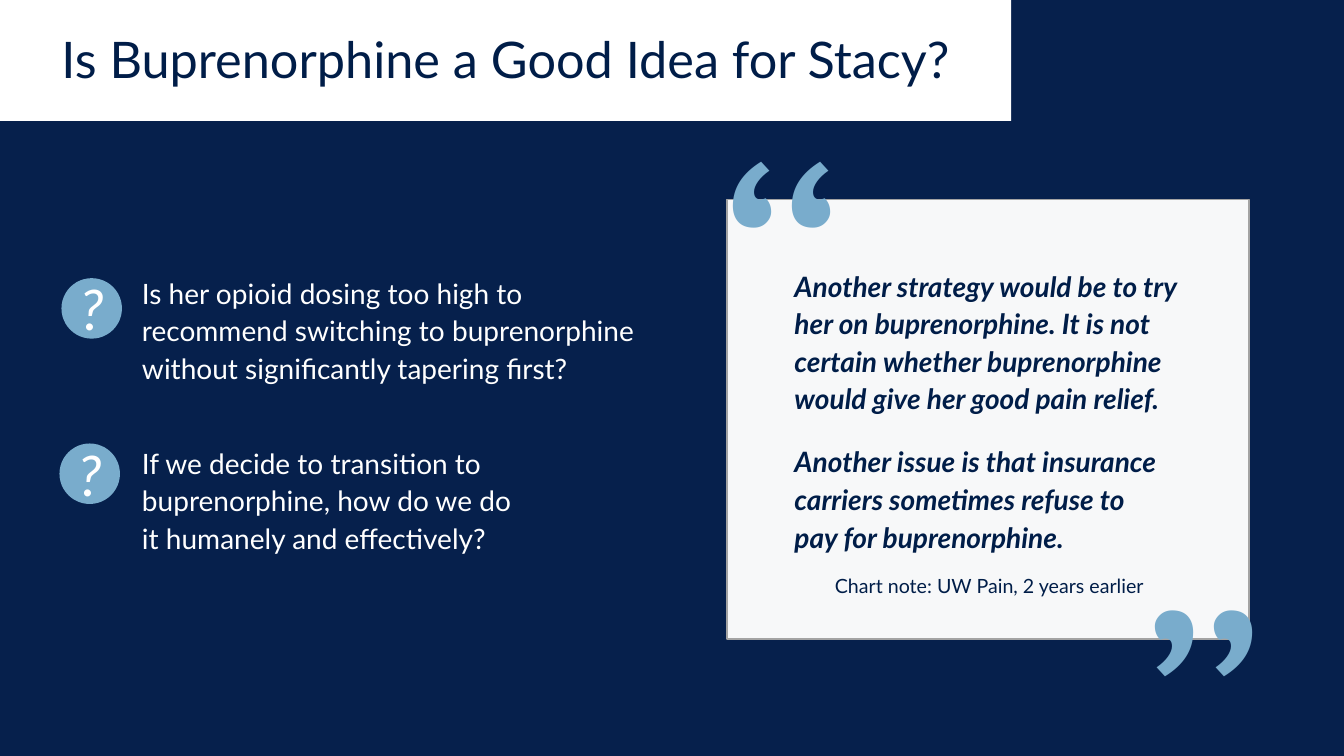
from lxml import etree
from pptx import Presentation
from pptx.dml.color import RGBColor
from pptx.enum.shapes import MSO_SHAPE as Shape
from pptx.enum.text import MSO_ANCHOR as Anchor, PP_ALIGN as Align
from pptx.oxml.ns import qn
from pptx.util import Inches, Pt

COLORS = {"navy": "06204C", "ink": "001D48", "white": "FFFFFF", "blue": "79ACCC", "gray": "A3A3A3"}
TITLE = "Is Buprenorphine a Good Idea for Stacy?"
QUESTIONS = [
    "Is her opioid dosing too high to recommend switching to buprenorphine without significantly tapering first?",
    "If we decide to transition to buprenorphine, how do we do\nit humanely and effectively?",
]
QUOTES = [
    "Another strategy would be to try\nher on buprenorphine. It is not certain whether "
    "buprenorphine would give her good pain relief.",
    "Another issue is that insurance carriers sometimes refuse to\npay for buprenorphine.",
]
SOURCE = "Chart note: UW Pain, 2 years earlier"
BADGES = [(0.61, 2.76), (0.59, 4.4)]
QUOTE_MARKS = [((6, 1, 2.35, 2), 180), ((11.35, 5.32, 2.35, 1.95), 0)]


def color(name):
    return RGBColor.from_string(COLORS[name])


def write(box, lines, size, ink, font="Lato", bold=False, italic=False,
          spacing=None, before=0, after=0, inset=0):
    frame = box.text_frame
    frame.word_wrap = True
    frame.margin_left = frame.margin_right = Inches(inset)
    frame.margin_top = frame.margin_bottom = Inches(inset / 2)
    for index, line in enumerate(lines):
        para = frame.add_paragraph() if index else frame.paragraphs[0]
        para.text = line
        para.line_spacing = spacing
        para.space_before = Pt(before if index else 0)
        para.space_after = Pt(after)
        for span in para.runs:
            span.font.name, span.font.size = font, Pt(size)
            span.font.bold, span.font.italic = bold, italic
            span.font.color.rgb = color(ink)


def add_text(page, area, lines, size, ink, **style):
    box = page.shapes.add_textbox(*map(Inches, area))
    write(box, lines, size, ink, **style)
    return box


def add_shape(page, kind, area, fill):
    shape = page.shapes.add_shape(kind, *map(Inches, area))
    shape.shadow.inherit = False
    shape.fill.solid()
    shape.fill.fore_color.rgb = color(fill)
    shape.line.fill.background()
    return shape


def add_card(page, area):
    card = add_shape(page, Shape.RECTANGLE, area, "white")
    card.line.color.rgb = color("gray")
    card.line.width = Pt(1)
    tint = card.fill._xPr.find(qn("a:solidFill"))[0]
    etree.SubElement(tint, qn("a:alpha")).set("val", "97000")


def add_badge(page, left, top):
    badge = add_shape(page, Shape.OVAL, (left, top, 0.6, 0.6), "blue")
    write(badge, ["?"], 40, "white", italic=True, inset=0.1)
    badge.text_frame.vertical_anchor = Anchor.MIDDLE
    badge.text_frame.paragraphs[0].alignment = Align.CENTER


def main():
    """Build the slide on buprenorphine for Stacy."""
    deck = Presentation()
    deck.slide_width, deck.slide_height = Inches(13.33), Inches(7.5)
    page = deck.slides.add_slide(deck.slide_layouts[6])
    page.background.fill.solid()
    page.background.fill.fore_color.rgb = color("navy")

    add_shape(page, Shape.RECTANGLE, (0, 0, 10.03, 1.2), "white")
    add_text(page, (0.61, 0.4, 12.15, 0.9), [TITLE], 36, "ink", spacing=Pt(34.6), after=6)

    add_card(page, (7.21, 1.98, 5.18, 4.36))
    add_text(page, (7.88, 2.63, 4.07, 3.09), QUOTES, 20, "ink", bold=True, italic=True,
             spacing=1.12, before=12, after=6)
    add_text(page, (8.28, 5.69, 3.24, 0.35), [SOURCE], 14, "ink")

    add_text(page, (1.31, 2.65, 5.39, 4.36), QUESTIONS, 20, "white",
             spacing=1.12, before=41, inset=0.1)
    for left, top in BADGES:
        add_badge(page, left, top)

    for area, angle in QUOTE_MARKS:
        mark = add_text(page, area, ["’’"], 180, "blue", font="Cambria", bold=True)
        mark.rotation = angle

    deck.save("out.pptx")


if __name__ == "__main__":
    main()
